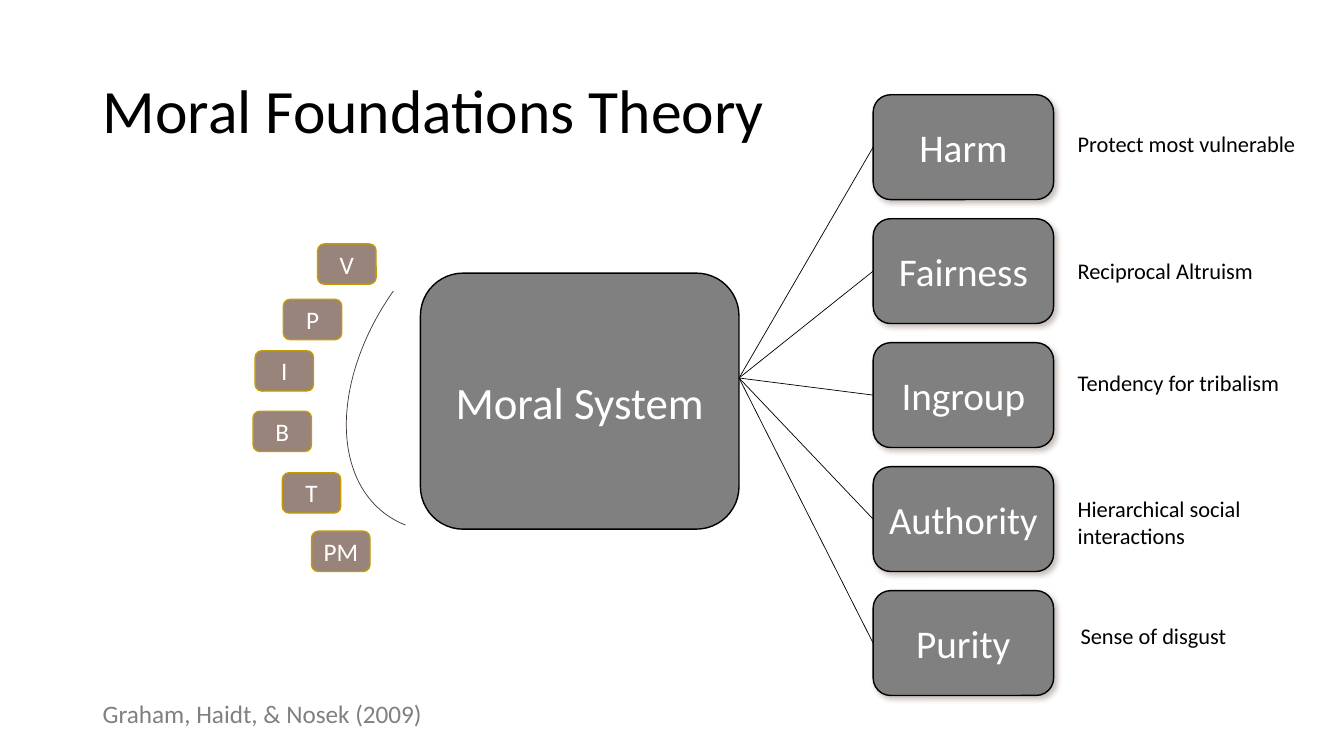
from lxml import etree
from pptx import Presentation
from pptx import util as u
from pptx.dml.color import RGBColor
from pptx.enum import shapes, text
from pptx.oxml import ns

PX = u.Inches(1) // 100
BLACK = RGBColor(0x00, 0x00, 0x00)
WHITE = RGBColor(0xFF, 0xFF, 0xFF)
GREY = RGBColor(0x80, 0x80, 0x80)
BROWN = RGBColor(0x82, 0x69, 0x5E)
DARK_BROWN = RGBColor(0x41, 0x34, 0x2F)
GOLD = RGBColor(0xC5, 0x9B, 0x00)
SHADOW = RGBColor(0x74, 0x62, 0x56)

deck = Presentation()
deck.slide_width, deck.slide_height = 1333 * PX, 750 * PX
page = deck.slides.add_slide(deck.slide_layouts[6])


def write(box, words, size, color, anchor=text.MSO_ANCHOR.TOP, align=None):
    frame = box.text_frame
    frame.word_wrap = True
    frame.vertical_anchor = anchor
    para = frame.paragraphs[0]
    para.alignment = align
    span = para.add_run()
    span.text = words
    span.font.name = "Calibri"
    span.font.size = u.Pt(size)
    span.font.color.rgb = color
    return frame


def add_tile(left, top, width, height, words, size, fill, line):
    box = page.shapes.add_shape(shapes.MSO_SHAPE.ROUNDED_RECTANGLE,
                                left * PX, top * PX, width * PX, height * PX)
    box.shadow.inherit = False
    box.fill.solid()
    box.fill.fore_color.rgb = fill
    box.line.color.rgb = line
    box.line.width = u.Pt(1)
    write(box, words, size, WHITE, text.MSO_ANCHOR.MIDDLE, text.PP_ALIGN.CENTER)
    return box


title = page.shapes.add_textbox(92 * PX, 40 * PX, 1150 * PX, 145 * PX)
frame = write(title, "Moral Foundations Theory", 44, BLACK, text.MSO_ANCHOR.MIDDLE)
frame.paragraphs[0].line_spacing = 0.9

add_tile(417, 271, 316, 254, "Moral System", 32, GREY, BLACK)

foundations = [
    ("Harm", 28, "Protect most vulnerable", 1059, 124, 37),
    ("Fairness", 28, "Reciprocal Altruism", 1059, 250, 37),
    ("Ingroup", 28, "Tendency for tribalism", 1059, 361, 37),
    ("Authority", 27.5, "Hierarchical social interactions", 1059, 486, 64),
    ("Purity", 28, "Sense of disgust", 1062, 612, 37),
]
for row, (name, size, meaning, left, top, height) in enumerate(foundations):
    tile_top = 94 + 123 * row
    tile = add_tile(866, tile_top, 179, 104, name, size, GREY, BLACK)
    effects = tile._element.spPr.find(ns.qn("a:effectLst"))
    shadow = etree.SubElement(effects, ns.qn("a:outerShdw"), blurRad=str(u.Pt(4)),
                              dist=str(u.Pt(3)), dir="2700000", algn="tl", rotWithShape="0")
    tint = etree.SubElement(shadow, ns.qn("a:srgbClr"), val=str(SHADOW))
    etree.SubElement(tint, ns.qn("a:alpha"), val="40000")

    note = page.shapes.add_textbox(left * PX, top * PX, 244 * PX, height * PX)
    frame = write(note, meaning, 16, BLACK)
    frame.auto_size = text.MSO_AUTO_SIZE.SHAPE_TO_FIT_TEXT

    link = page.shapes.add_connector(shapes.MSO_CONNECTOR.STRAIGHT, 866 * PX,
                                     (tile_top + 52) * PX, 733 * PX, 375 * PX)
    link.line.color.rgb = BLACK
    link.line.width = u.Pt(0.5)
    etree.SubElement(link._element.spPr, ns.qn("a:effectLst"))

arc = page.shapes.add_shape(shapes.MSO_SHAPE.ARC, 372 * PX, 161 * PX, 257 * PX, 389 * PX)
arc.shadow.inherit = False
arc.adjustments[0] = 157.54
arc.adjustments[1] = 211.76
arc.rotation = 218.2
arc.fill.background()
arc.line.color.rgb = DARK_BROWN
arc.line.width = u.Pt(0.5)

inputs = [("V", 315, 242), ("P", 281, 297), ("I", 253, 348),
          ("B", 251, 408), ("T", 280, 469), ("PM", 309, 527)]
for letter, left, top in inputs:
    tile = add_tile(left, top, 58, 40, letter, 18, BROWN, GOLD)
    tint = tile._element.spPr.find(ns.qn("a:solidFill"))[0]
    etree.SubElement(tint, ns.qn("a:alpha"), val="82000")

credit = page.shapes.add_textbox(92 * PX, 688 * PX, 340 * PX, 40 * PX)
frame = write(credit, "Graham, Haidt, & Nosek (2009)", 18, GREY)
frame.word_wrap = False
frame.auto_size = text.MSO_AUTO_SIZE.SHAPE_TO_FIT_TEXT

deck.save("out.pptx")
